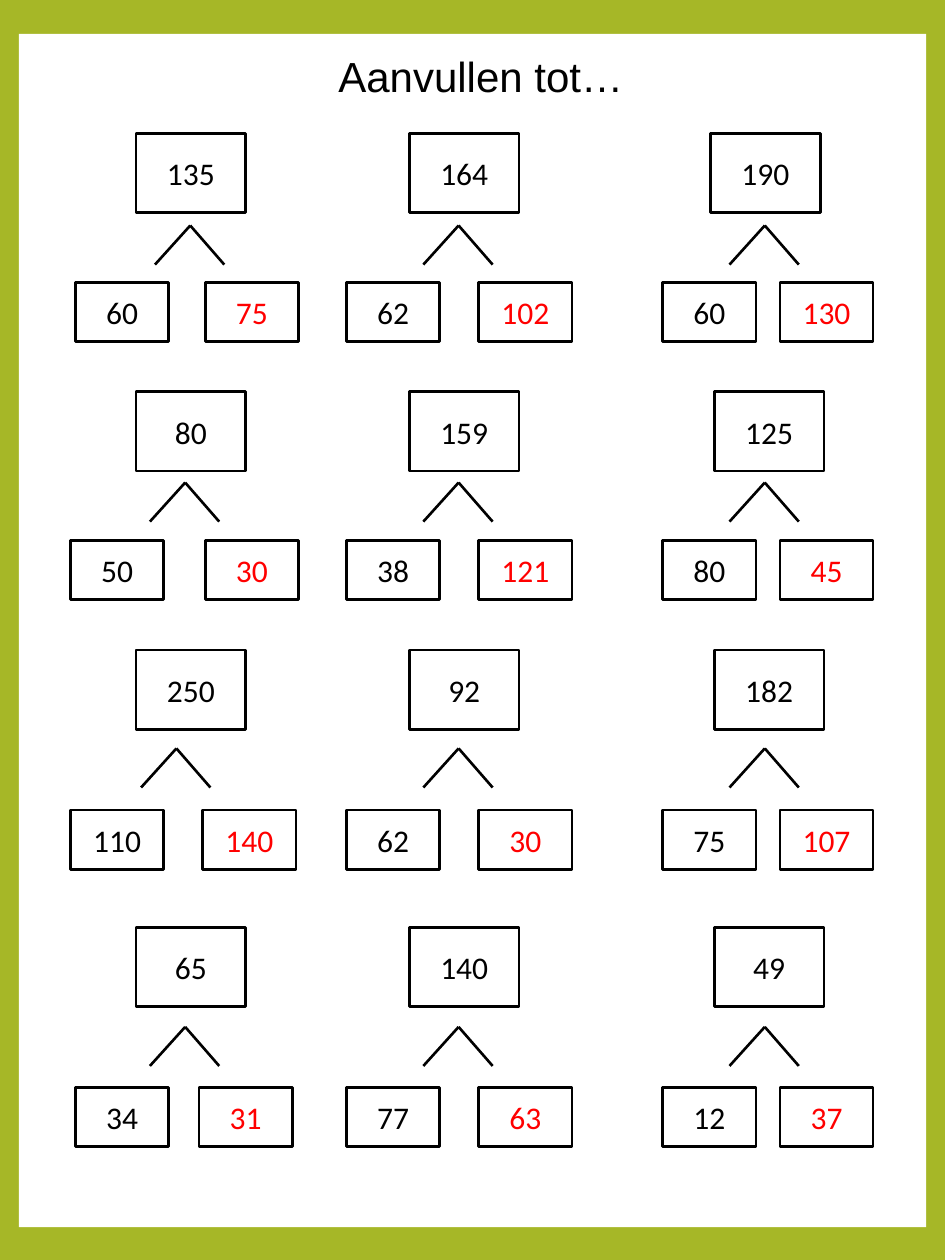
from dataclasses import dataclass

from lxml import etree
from pptx import Presentation
from pptx import util as u
from pptx.dml.color import RGBColor
from pptx.enum import shapes, text
from pptx.oxml.ns import qn


@dataclass(frozen=True)
class Theme:
    frame: str = "A6B727"
    paper: str = "FFFFFF"
    ink: str = "000000"
    answer: str = "FF0000"
    title_font: str = "Arial"
    number_font: str = "Calibri"
    title_size: float = 24
    number_size: float = 18
    line_width: float = 1.5


@dataclass(frozen=True)
class Column:
    total: float
    peak: float
    given: float
    answer: float


@dataclass(frozen=True)
class Row:
    total: float
    peak: float
    addends: float


THEME = Theme()
SLIDE_SIZE = (7.5, 10)

# Grid, in inches
COLUMNS = [
    Column(1.08, 1.47, 0.56, 1.63),
    Column(3.25, 3.64, 2.75, 3.80),
    Column(5.67, 6.07, 5.26, 6.19),
]
ROWS = [
    Row(1.06, 1.79, 2.24),
    Row(3.11, 3.83, 4.29),
    Row(5.16, 5.94, 6.43),
    Row(7.36, 8.15, 8.63),
]
TOTAL_SIZE = (0.87, 0.63)
ADDEND_SIZE = (0.74, 0.47)
LEGS = [(-0.28, 0.31), (0.27, 0.31)]

# Horizontal shifts of single pieces, by (row, column)
SHIFTS = {
    (0, 0): {"peak": 0.04, "given": 0.04},
    (0, 2): {"total": -0.03},
    (2, 0): {"peak": -0.07, "answer": -0.02},
    (3, 0): {"given": 0.04, "answer": -0.05},
}

# (total, given addend) per puzzle; the answer is the difference
PUZZLES = [
    [(135, 60), (164, 62), (190, 60)],
    [(80, 50), (159, 38), (125, 80)],
    [(250, 110), (92, 62), (182, 75)],
    [(65, 34), (140, 77), (49, 12)],
]


def rgb(value):
    return RGBColor.from_string(value)


def write(shape, words, font, size, color):
    paragraph = shape.text_frame.paragraphs[0]
    paragraph.alignment = text.PP_ALIGN.CENTER
    run = paragraph.add_run()
    run.text = words
    for name, value in {"name": font, "size": u.Pt(size)}.items():
        setattr(run.font, name, value)
    run.font.color.rgb = rgb(color)


def outline(shape):
    shape.line.color.rgb = rgb(THEME.ink)
    shape.line.width = u.Pt(THEME.line_width)


def add_panel(slide, left, top, width, height):
    shape = slide.shapes.add_shape(
        shapes.MSO_SHAPE.RECTANGLE, *map(u.Inches, (left, top, width, height)))
    shape.shadow.inherit = False
    shape.fill.solid()
    shape.fill.fore_color.rgb = rgb(THEME.paper)
    shape.line.fill.background()
    return shape


def add_number(slide, number, position, size, color=THEME.ink):
    shape = add_panel(slide, *position, *size)
    outline(shape)
    shape.text_frame.vertical_anchor = text.MSO_ANCHOR.MIDDLE
    write(shape, str(number), THEME.number_font, THEME.number_size, color)


def add_leg(slide, x, y, dx, dy):
    connector = slide.shapes.add_connector(
        shapes.MSO_CONNECTOR.STRAIGHT, *map(u.Inches, (x, y, x + dx, y + dy)))
    outline(connector)
    etree.SubElement(connector._element.spPr, qn("a:effectLst"))


def add_title(slide, words):
    box = slide.shapes.add_textbox(*map(u.Inches, (2.57, 0.35, 2.49, 0.5)))
    settings = {"word_wrap": False,
                "auto_size": text.MSO_AUTO_SIZE.SHAPE_TO_FIT_TEXT}
    for name, value in settings.items():
        setattr(box.text_frame, name, value)
    write(box, words, THEME.title_font, THEME.title_size, THEME.ink)


def add_puzzle(slide, row, column, shifts, total, given):
    def x(piece):
        return getattr(column, piece) + shifts.get(piece, 0)

    add_number(slide, total, (x("total"), row.total), TOTAL_SIZE)
    for dx, dy in LEGS:
        add_leg(slide, x("peak"), row.peak, dx, dy)
    add_number(slide, given, (x("given"), row.addends), ADDEND_SIZE)
    add_number(slide, total - given, (x("answer"), row.addends), ADDEND_SIZE,
               THEME.answer)


def main():
    presentation = Presentation()
    presentation.slide_width, presentation.slide_height = map(
        u.Inches, SLIDE_SIZE)
    slide = presentation.slides.add_slide(presentation.slide_layouts[6])

    # Green frame around a white sheet
    slide.background.fill.solid()
    slide.background.fill.fore_color.rgb = rgb(THEME.frame)
    add_panel(slide, 0.15, 0.27, 7.2, 9.47)

    add_title(slide, "Aanvullen tot…")

    # Puzzles
    for i, row in enumerate(ROWS):
        for j, column in enumerate(COLUMNS):
            add_puzzle(slide, row, column, SHIFTS.get((i, j), {}),
                       *PUZZLES[i][j])

    presentation.save("out.pptx")


if __name__ == "__main__":
    main()
